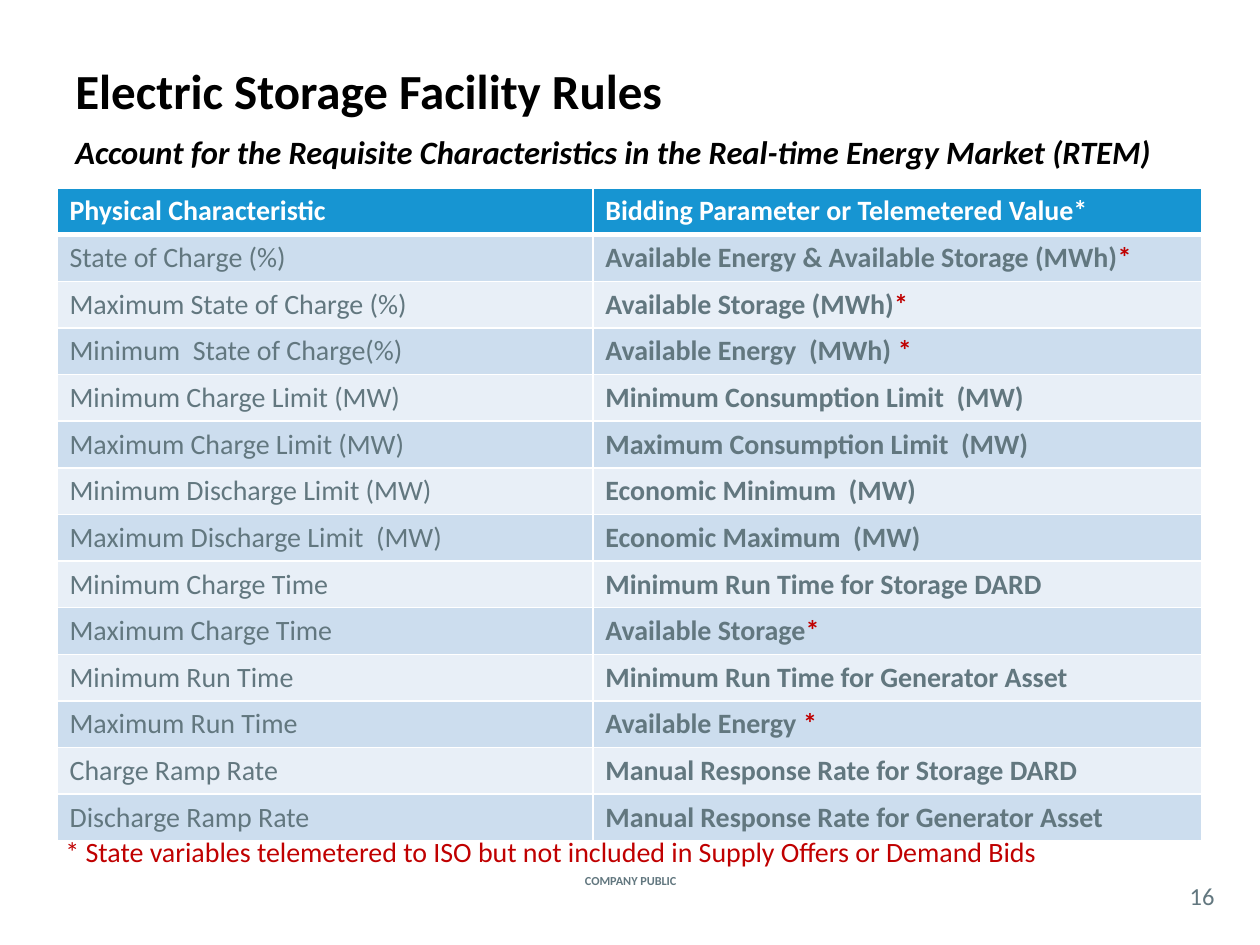
import pptx
import pptx.dml.color
import pptx.enum.text
import pptx.oxml
import pptx.oxml.ns
import pptx.util
from pptx.util import Cm

FONT = "Calibri"
BLACK, WHITE, GREY, RED = "000000", "FFFFFF", "62777F", "C00000"
HEADER_FILL, BANDS = "1795D2", ("CCDDEE", "E8EFF7")
MIDDLE = pptx.enum.text.MSO_ANCHOR.MIDDLE
CENTER = pptx.enum.text.PP_ALIGN.CENTER

HEADER = ("Physical Characteristic", "Bidding Parameter or Telemetered Value*")
ROWS = [
    ("State of Charge (%)", "Available Energy & Available Storage (MWh)*"),
    ("Maximum State of Charge (%)", "Available Storage (MWh)*"),
    ("Minimum  State of Charge(%)", "Available Energy  (MWh) *"),
    ("Minimum Charge Limit (MW)", "Minimum Consumption Limit  (MW)"),
    ("Maximum Charge Limit (MW)", "Maximum Consumption Limit  (MW)"),
    ("Minimum Discharge Limit (MW)", "Economic Minimum  (MW)"),
    ("Maximum Discharge Limit  (MW)", "Economic Maximum  (MW)"),
    ("Minimum Charge Time", "Minimum Run Time for Storage DARD"),
    ("Maximum Charge Time", "Available Storage*"),
    ("Minimum Run Time", "Minimum Run Time for Generator Asset"),
    ("Maximum Run Time", "Available Energy *"),
    ("Charge Ramp Rate", "Manual Response Rate for Storage DARD"),
    ("Discharge Ramp Rate", "Manual Response Rate for Generator Asset"),
]


def rgb(color):
    return pptx.dml.color.RGBColor.from_string(color)


def style(font, size, color, bold=False, italic=False):
    font.name, font.size = FONT, pptx.util.Pt(size)
    font.bold, font.italic = bold, italic
    font.color.rgb = rgb(color)


def add_text(s, box, text, size, color, bold=False, italic=False,
             anchor=None, align=None, inset=None):
    tf = s.shapes.add_textbox(*(Cm(v) for v in box)).text_frame
    tf.word_wrap = True
    if anchor is not None:
        tf.vertical_anchor = anchor
    if inset is not None:
        tf.margin_left = tf.margin_right = Cm(inset)
        tf.margin_top = tf.margin_bottom = Cm(inset)
    p = tf.paragraphs[0]
    p.text, p.alignment = text, align
    style(p.font, size, color, bold, italic)


def set_borders(cell, top=1, bottom=1):
    tc_pr = cell._tc.get_or_add_tcPr()
    for side, width in (("L", 1), ("R", 1), ("T", top), ("B", bottom)):
        tc_pr.append(pptx.oxml.parse_xml(
            f'<a:ln{side} {pptx.oxml.ns.nsdecls("a")} w="{pptx.util.Pt(width)}">'
            f'<a:solidFill><a:srgbClr val="{WHITE}"/></a:solidFill></a:ln{side}>'))


def fill_cell(cell, text, fill, color, bold, top=1, bottom=1):
    set_borders(cell, top, bottom)
    cell.fill.solid()
    cell.fill.fore_color.rgb = rgb(fill)
    p = cell.text_frame.paragraphs[0]
    p.text = text
    style(p.font, 16, color, bold)


def add_red_star(cell):
    r = cell.text_frame.paragraphs[0].add_run()
    r.text = "*"
    r.font.color.rgb = rgb(RED)


def add_rules_table(s):
    row_height = 0.94
    count = len(ROWS) + 1
    table = s.shapes.add_table(count, 2, Cm(1.15), Cm(3.79), Cm(23.07),
                               Cm(row_height * count)).table
    for column, width in zip(table.columns, (10.8, 12.27)):
        column.width = Cm(width)
    for row in table.rows:
        row.height = Cm(row_height)
    for col, text in enumerate(HEADER):
        fill_cell(table.cell(0, col), text, HEADER_FILL, WHITE, True, bottom=3)
    for i, texts in enumerate(ROWS):
        for col, text in enumerate(texts):
            cell = table.cell(i + 1, col)
            fill_cell(cell, text.removesuffix("*"), BANDS[i % 2], GREY,
                      col == 1, top=3 if i == 0 else 1)
            if text.endswith("*"):
                add_red_star(cell)


def main():
    prs = pptx.Presentation()
    prs.slide_width, prs.slide_height = Cm(25.4), Cm(19.05)
    s = prs.slides.add_slide(prs.slide_layouts[6])
    add_text(s, (10.85, 17.07, 3.73, 1.37), "COMPANY PUBLIC", 7, GREY,
             bold=True, anchor=MIDDLE, align=CENTER)
    add_text(s, (1.27, 1.07, 22.86, 1.47), "Electric Storage Facility Rules",
             28, BLACK, bold=True, anchor=MIDDLE)
    add_text(s, (23.7, 17.68, 1.07, 0.74), "16", 14, GREY,
             anchor=MIDDLE, align=CENTER, inset=0)
    add_text(s, (1.27, 2.54, 22.86, 1.27),
             "Account for the Requisite Characteristics in the "
             "Real-time Energy Market (RTEM)",
             18.6, BLACK, bold=True, italic=True)
    add_rules_table(s)
    add_text(s, (1.07, 16.69, 20.35, 0.94),
             "* State variables telemetered to ISO but not included in "
             "Supply Offers or Demand Bids", 16, RED)
    prs.save("out.pptx")


if __name__ == "__main__":
    main()
